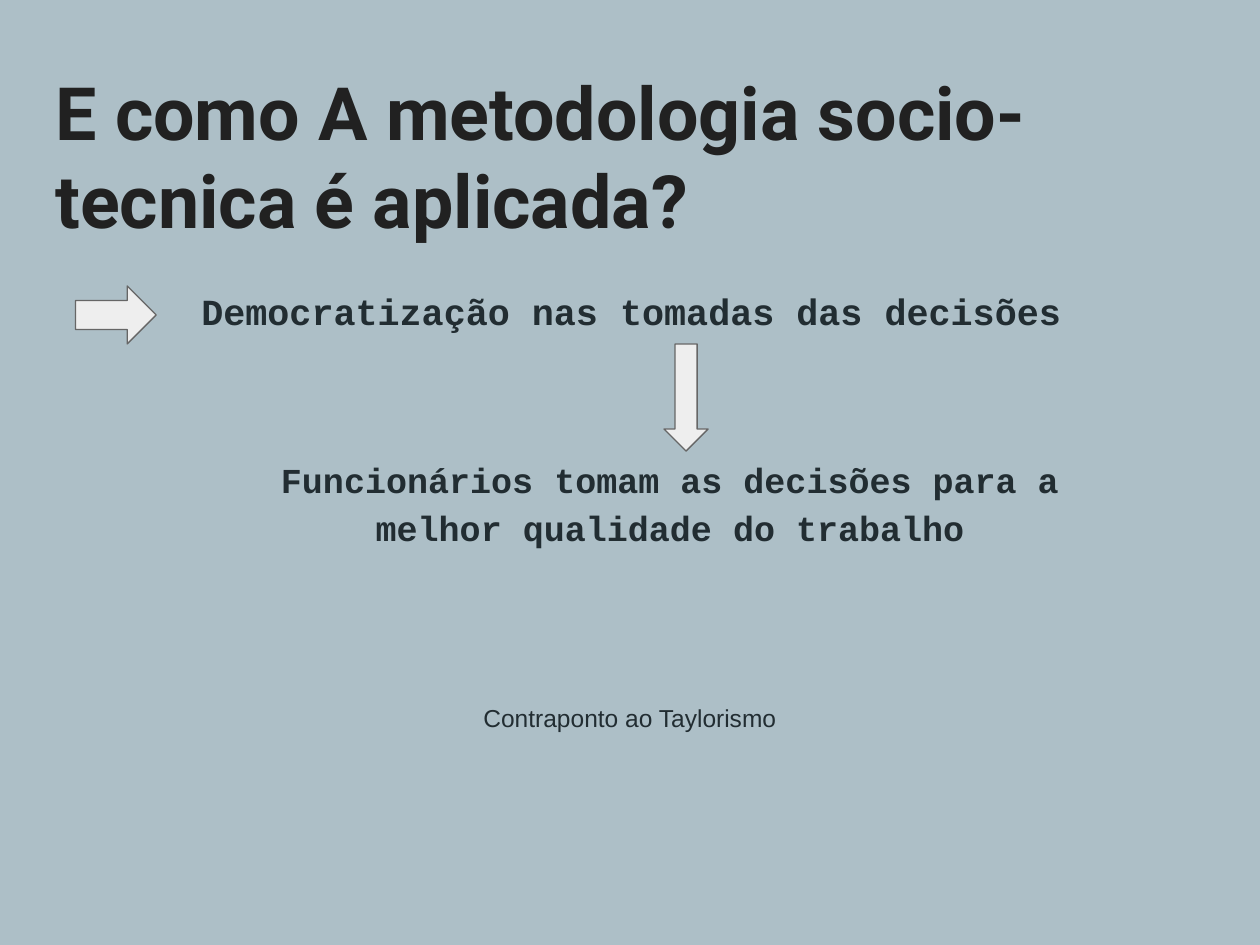
from pptx import Presentation
from pptx.dml.color import RGBColor
from pptx.enum import shapes, text
from pptx.util import Inches, Pt

WIDTH, HEIGHT = Inches(10), Inches(7.5)
INK = "222D32"


def color(value):
    return RGBColor.from_string(value)


def share(left, top, width, height):
    return (int(WIDTH * left / 100), int(HEIGHT * top / 100),
            int(WIDTH * width / 100), int(HEIGHT * height / 100))


def format_text(shape, content, font_name, size, ink=INK, bold=True,
                align=text.PP_ALIGN.LEFT, spacing=1.0, inset=0.1):
    frame = shape.text_frame
    frame.text = content
    frame.word_wrap = True
    frame.auto_size = text.MSO_AUTO_SIZE.NONE
    frame.vertical_anchor = text.MSO_ANCHOR.TOP
    frame.margin_left = frame.margin_right = Inches(0.1)
    frame.margin_top = frame.margin_bottom = Inches(inset)
    paragraph = frame.paragraphs[0]
    paragraph.alignment = align
    paragraph.line_spacing = spacing
    font = paragraph.runs[0].font
    font.name = font_name
    font.size = Pt(size)
    font.bold = bold
    font.color.rgb = color(ink)


def set_title(slide, area, content):
    title = slide.shapes.title
    title.left, title.top, title.width, title.height = share(*area)
    format_text(title, content, "Roboto", 42, "212121")


def add_text(slide, area, content, font_name, size, **style):
    box = slide.shapes.add_textbox(*share(*area))
    format_text(box, content, font_name, size, **style)


def add_arrow(slide, area, rotation=0):
    arrow = slide.shapes.add_shape(shapes.MSO_SHAPE.RIGHT_ARROW, *share(*area))
    arrow.rotation = rotation
    arrow.shadow.inherit = False
    arrow.fill.solid()
    arrow.fill.fore_color.rgb = color("EEEEEE")
    arrow.line.color.rgb = color("666666")
    arrow.line.width = Pt(0.75)


def main():
    presentation = Presentation()
    presentation.slide_width, presentation.slide_height = WIDTH, HEIGHT
    slide = presentation.slides.add_slide(presentation.slide_layouts[5])
    slide.background.fill.solid()
    slide.background.fill.fore_color.rgb = color("ADBFC7")

    center = text.PP_ALIGN.CENTER
    set_title(slide, (3.4, 5.73, 93.2, 15.6),
              "E como A metodologia socio-tecnica é aplicada?")
    add_arrow(slide, (6, 30.27, 6.4, 6.13))
    add_text(slide, (15, 28.53, 76.4, 16.93),
             "Democratização nas tomadas das decisões",
             "Courier New", 21, spacing=1.15)
    add_arrow(slide, (50.2, 39.73, 8.5, 4.67), rotation=90)
    add_text(slide, (19.1, 46.53, 68.2, 24.93),
             "Funcionários tomam as decisões para a melhor qualidade do trabalho",
             "Courier New", 20, align=center, spacing=1.15)
    add_text(slide, (5.2, 73.73, 89.6, 12.53), "Contraponto ao Taylorismo",
             "Arial", 14, bold=False, align=center, inset=0.05)
    presentation.save("out.pptx")


if __name__ == "__main__":
    main()
